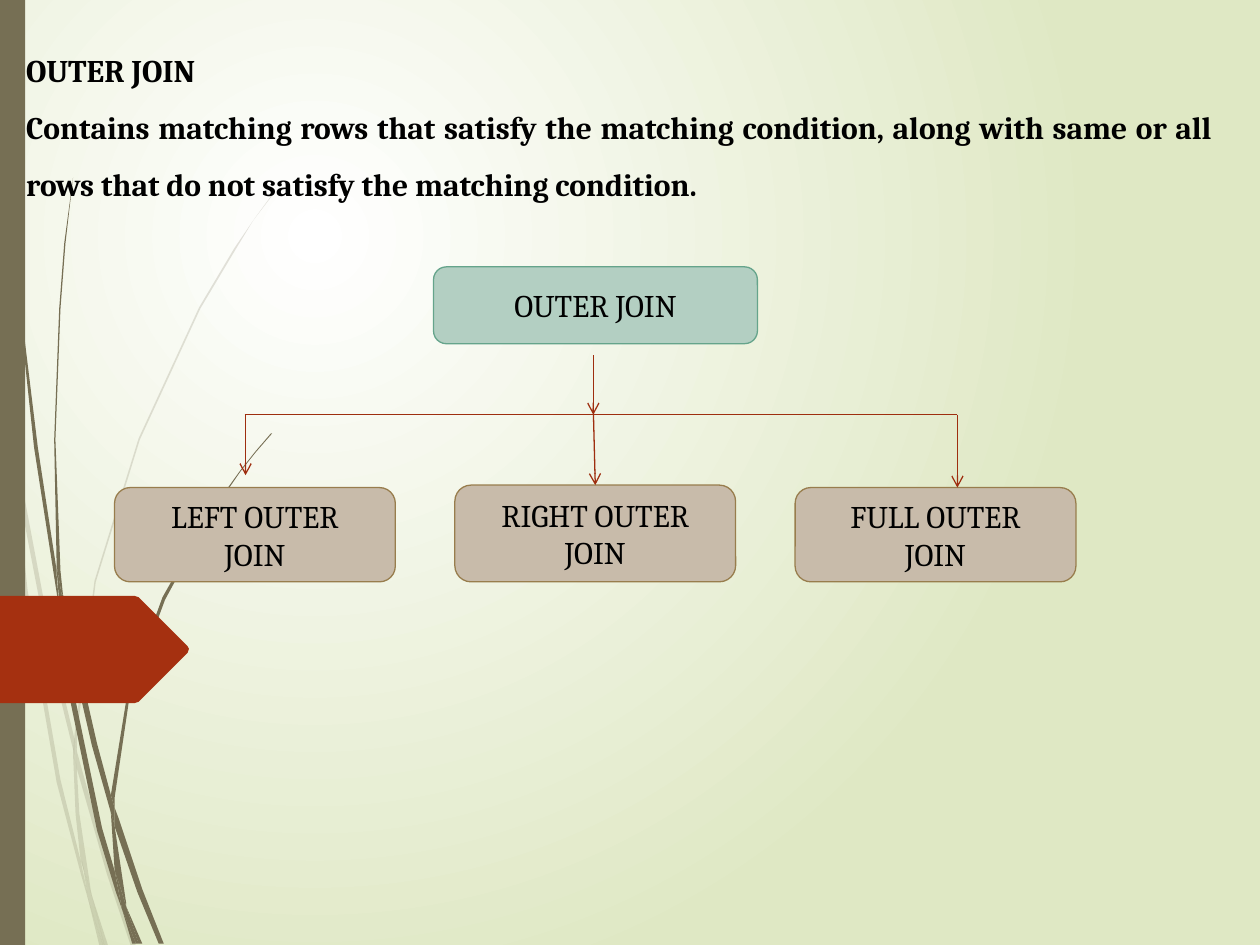
import dataclasses
import lxml.etree
import pptx
import pptx.dml.color
import pptx.enum.shapes
import pptx.enum.text
import pptx.oxml.ns
import pptx.util

Cm = pptx.util.Cm
Pt = pptx.util.Pt
RGB = pptx.dml.color.RGBColor.from_string
Kind = pptx.enum.shapes.MSO_SHAPE
Align = pptx.enum.text.PP_ALIGN
qn = pptx.oxml.ns.qn


@dataclasses.dataclass(frozen=True)
class Theme:
    glow: str = "FFFFFF"
    edge: str = "DFE8C4"
    stem: str = "766F54"
    tag: str = "A53010"
    wire: str = "9E2E0F"
    ink: str = "000000"
    root: tuple = ("B3CFC2", "65A48B")
    leaf: tuple = ("C8BBAA", "987D4D")
    font: str = "Cambria"
    size: float = 18
    thin: float = 0.75


PALE = [
    [8, 350, 6, 322, 0, 282, 0, 299, 7, 344],
    [40, 522, 59, 599, 59, 586, 43, 520, 10, 345, 12, 376],
    [64, 607, 61, 596, 61, 610, 85, 694, 104, 751, 108, 751, 88, 692],
    [83, 751, 86, 751, 73, 711],
    [64, 683, 48, 619, 22, 469, 12, 376, 8, 350, 19, 470, 45, 621, 64, 693,
     70, 714, 69, 707],
    [58, 599, 60, 646, 64, 683, 67, 692, 73, 711, 72, 706, 63, 646, 61, 610,
     61, 608],
    [61, 584, 76, 462, 111, 349, 159, 245, 187, 198, 201, 175, 217, 154,
     217, 153, 201, 175, 186, 197, 158, 244, 110, 348, 75, 461, 59, 584,
     59, 586, 61, 596],
    [70, 714, 79, 751, 82, 751],
    [61, 608, 61, 610, 61, 596, 59, 586, 58, 599],
    [67, 692, 65, 683, 69, 707, 70, 714, 82, 751, 83, 751, 73, 711],
]
DARK = [
    [5, 110, 14, 233, 27, 355, 46, 477, 47, 481, 45, 457, 45, 453, 30, 355,
     15, 232, 6, 109, 4, 48, 3, 0, 2, 0, 3, 48],
    [73, 592, 88, 645, 88, 633, 88, 631, 77, 590, 50, 472, 53, 505],
    [94, 649, 91, 641, 91, 656, 109, 708, 126, 749, 130, 749, 113, 706],
    [91, 691, 81, 657, 60, 556, 53, 505, 47, 477, 56, 557, 77, 659, 92, 708,
     97, 722, 96, 717],
    [50, 472, 48, 453, 44, 349, 48, 245, 52, 193, 58, 141, 51, 193,
     47, 245, 43, 349, 45, 449, 49, 472],
    [110, 749, 113, 749, 100, 719],
    [47, 477, 53, 505, 50, 472, 49, 472, 45, 449, 45, 453],
    [91, 633, 103, 552, 131, 476, 169, 406, 191, 374, 203, 359, 216, 344,
     215, 344, 203, 358, 191, 373, 168, 405, 129, 474, 101, 551, 88, 631,
     91, 641],
    [97, 722, 105, 749, 108, 749],
    [88, 645, 91, 691, 96, 706, 100, 719, 100, 716, 91, 656, 90, 651],
    [88, 645, 90, 651, 91, 656, 91, 641, 88, 631, 88, 633],
    [96, 706, 91, 691, 96, 717, 97, 722, 108, 749, 110, 749, 100, 719],
]
TAG = [-3, 473, 107, 473, 110, 474, 149, 513, 150, 515, 149, 518, 110, 557,
       107, 558, -3, 558]


class Deck:
    def __init__(self, theme):
        self.theme = theme
        self.prs = pptx.Presentation()
        self.put(self.prs, slide_width=Cm(25.4), slide_height=Cm(19.05))
        self.slide = self.prs.slides.add_slide(self.prs.slide_layouts[6])
        self.shapes = self.slide.shapes

    def put(self, item, **vals):
        for name, val in vals.items():
            setattr(item, name, val)

    def ground(self):
        fill = self.slide.background.fill
        fill.gradient()
        hues = (self.theme.glow, self.theme.edge)
        for stop, hue, place in zip(fill.gradient_stops, hues, (0, 1)):
            stop.color.rgb = RGB(hue)
            stop.position = place
        grad = next(self.slide.element.iter(qn("a:gradFill")))
        grad.remove(grad.find(qn("a:lin")))
        ring = lxml.etree.SubElement(grad, qn("a:path"), path="circle")
        lxml.etree.SubElement(ring, qn("a:fillToRect"), l="50000", t="50000",
                              r="100000", b="100000")

    def paint(self, shape, hue, rim=None):
        shape.shadow.inherit = False
        shape.fill.solid()
        shape.fill.fore_color.rgb = RGB(hue)
        if rim:
            shape.line.color.rgb = RGB(rim)
            shape.line.width = Pt(self.theme.thin)
        else:
            shape.line.fill.background()

    def patch(self, flat, hue, alpha=None):
        pairs = list(zip(flat[::2], flat[1::2]))
        pen = self.shapes.build_freeform(*pairs[0], scale=Cm(2.54) / 100)
        pen.add_line_segments(pairs[1:], close=True)
        shape = pen.convert_to_shape()
        self.paint(shape, hue)
        if alpha:
            tint = next(shape.element.spPr.iter(qn("a:srgbClr")))
            lxml.etree.SubElement(tint, qn("a:alpha"), val=str(alpha * 1000))

    def label(self, frame, lines, bold=False, **form):
        frame.word_wrap = True
        for i, line in enumerate(lines):
            para = frame.add_paragraph() if i else frame.paragraphs[0]
            para.text = line
            self.put(para, **form)
            for run in para.runs:
                self.put(run.font, name=self.theme.font, bold=bold,
                         size=Pt(self.theme.size))
                run.font.color.rgb = RGB(self.theme.ink)

    def text(self, area, lines):
        box = self.shapes.add_textbox(*map(Cm, area))
        self.label(box.text_frame, lines, bold=True,
                   alignment=Align.JUSTIFY, line_spacing=1.5)

    def bar(self, area, hue):
        self.paint(self.shapes.add_shape(Kind.RECTANGLE, *map(Cm, area)), hue)

    def box(self, area, words, hues):
        shape = self.shapes.add_shape(Kind.ROUNDED_RECTANGLE, *map(Cm, area))
        self.paint(shape, *hues)
        shape.text_frame.vertical_anchor = pptx.enum.text.MSO_ANCHOR.MIDDLE
        self.label(shape.text_frame, [words], alignment=Align.CENTER)
        return shape

    def wire(self, ends, head=True, goal=None):
        line = self.shapes.add_connector(
            pptx.enum.shapes.MSO_CONNECTOR.STRAIGHT, *map(Cm, ends))
        if goal is not None:
            line.end_connect(goal, 0)
        line.line.color.rgb = RGB(self.theme.wire)
        line.line.width = Pt(self.theme.thin)
        props = line.element.spPr
        if head:
            lxml.etree.SubElement(props.find(qn("a:ln")), qn("a:tailEnd"),
                                  type="arrow")
        lxml.etree.SubElement(props, qn("a:effectLst"))


def main():
    theme = Theme()
    deck = Deck(theme)
    deck.ground()
    for flat in PALE:
        deck.patch(flat, theme.stem, 20)
    for flat in DARK:
        deck.patch(flat, theme.stem)
    deck.bar((0, 0, 0.51, 19.05), theme.stem)
    deck.patch(TAG, theme.tag)

    deck.text((0.28, 0.53, 24.41, 3.71), [
        "OUTER JOIN",
        "Contains matching rows that satisfy the matching condition, along "
        "with same or all rows that do not satisfy the matching condition."])

    deck.box((8.74, 5.38, 6.53, 1.55), "OUTER JOIN", theme.root)
    leaves = [
        deck.box((2.31 + 6.86 * i, top, 5.66, 11.73 - top),
                 side + " OUTER\vJOIN", theme.leaf)
        for i, (side, top) in enumerate(
            [("LEFT", 9.83), ("RIGHT", 9.78), ("FULL", 9.83)])]

    rail = 8.36
    deck.wire((4.93, rail, 19.3, rail), head=False)
    deck.wire((4.95, rail, 4.95, 9.58))
    deck.wire((11.96, 8.23, 12, 9.78), goal=leaves[1])
    deck.wire((19.3, rail, 19.3, 9.83))
    deck.wire((11.96, 7.16, 11.96, rail))
    deck.prs.save("out.pptx")


if __name__ == "__main__":
    main()
